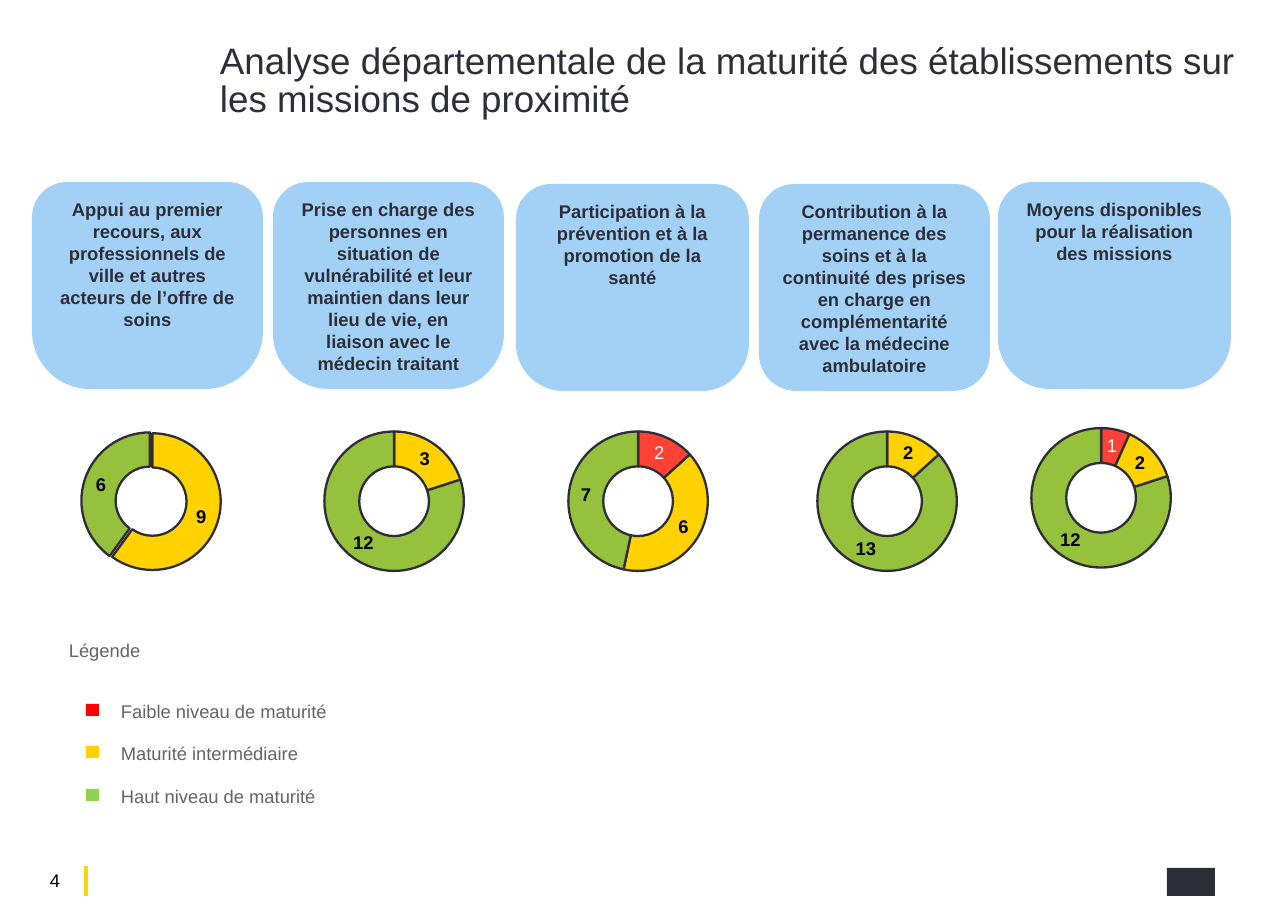
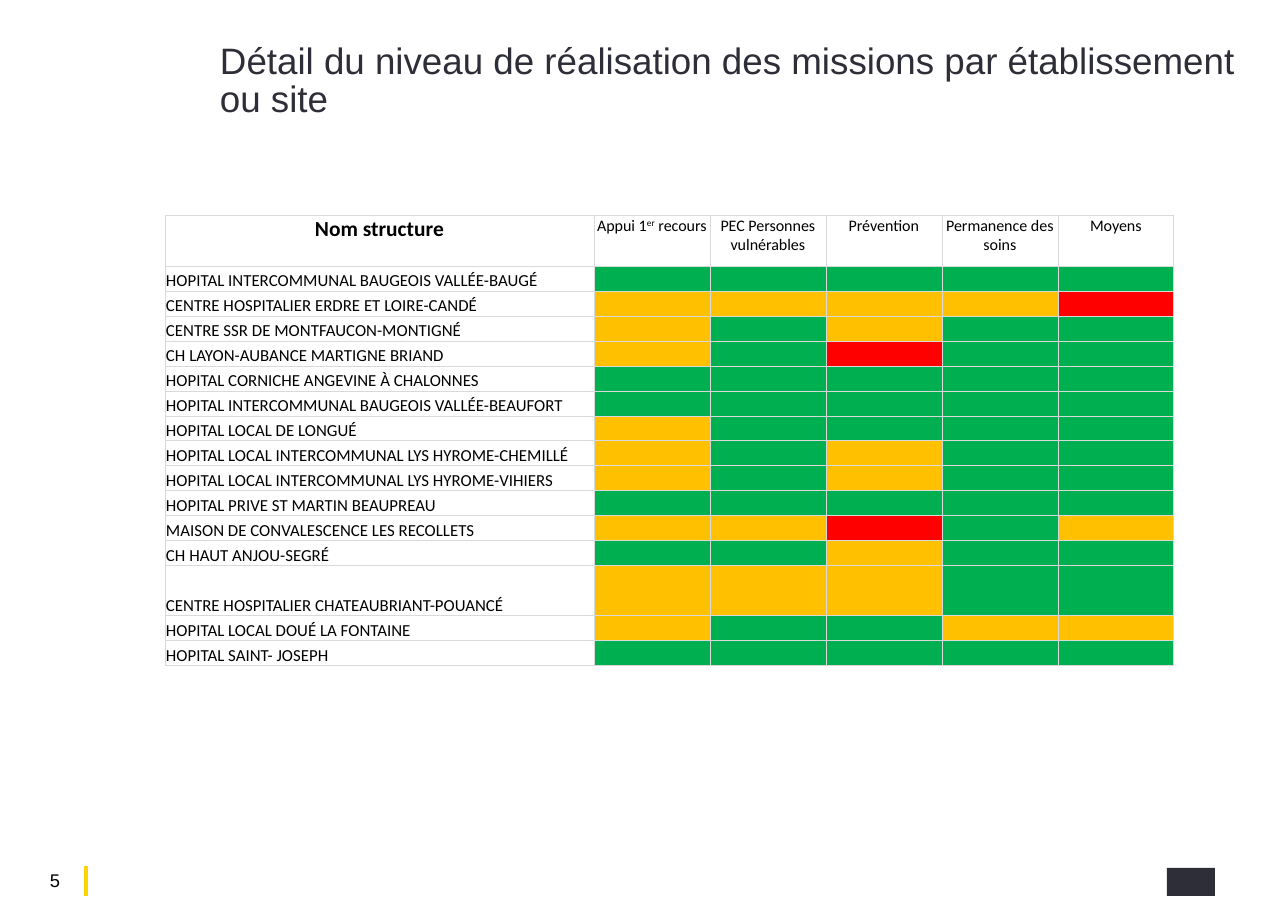
"""Build two slides on the maturity of local hospitals: donut charts and a status table."""
from lxml.etree import SubElement
from pptx import Presentation
from pptx.chart.data import CategoryChartData
from pptx.dml.color import RGBColor
from pptx.enum.chart import XL_CHART_TYPE as ChartType
from pptx.enum.shapes import MSO_CONNECTOR as Connector, MSO_SHAPE as Shape
from pptx.enum.text import MSO_ANCHOR as Anchor, PP_ALIGN as Align
from pptx.oxml import parse_xml
from pptx.oxml.ns import nsdecls, qn
from pptx.util import Emu, Pt

SCALE = 8300
WIDTH, HEIGHT = 1288, 911

BLACK = RGBColor(0x00, 0x00, 0x00)
WHITE = RGBColor(0xFF, 0xFF, 0xFF)
INK = RGBColor(0x2E, 0x2E, 0x38)
GREY = RGBColor(0x64, 0x64, 0x64)
YELLOW = RGBColor(0xFF, 0xD2, 0x00)
SKY = RGBColor(0xA2, 0xD1, 0xF5)
RED = RGBColor(0xFF, 0x00, 0x00)
LIME = RGBColor(0x92, 0xD0, 0x50)
SLICES = [RGBColor(0xFF, 0x41, 0x36), YELLOW, RGBColor(0x95, 0xC1, 0x3D)]
BORDER = "D9D9D9"
STATUS = {
    "V": RGBColor(0x00, 0xB0, 0x50),
    "O": RGBColor(0xFF, 0xC0, 0x00),
    "R": RED,
}

CHART_TITLE = "Analyse départementale de la maturité des établissements sur les missions de proximité"
TABLE_TITLE = "Détail du niveau de réalisation des missions par établissement ou site"

MISSIONS = [
    dict(text="Appui au premier recours, aux professionnels de ville et autres acteurs de l’offre de soins",
         card=(32, 182, 231, 207), bottom=0.28, chart=(20, 418, 279, 165),
         values=(None, 9, 6), explosion=4),
    dict(text="Prise en charge des personnes en situation de vulnérabilité et leur maintien dans "
              "leur lieu de vie, en liaison avec le médecin traitant",
         card=(273, 182, 231, 207), bottom=0.27, chart=(263, 418, 279, 165),
         values=(None, 3, 12), explosion=0),
    dict(text="Participation à la prévention et à la promotion de la santé",
         card=(516, 184, 233, 207), bottom=0.23, chart=(507, 418, 279, 165),
         values=(2, 6, 7), explosion=0),
    dict(text="Contribution à la permanence des soins et à la continuité des prises en charge en "
              "complémentarité avec la médecine ambulatoire",
         card=(759, 184, 231, 207), bottom=0.18, chart=(756, 418, 279, 165),
         values=(None, 2, 13), explosion=0),
    dict(text="Moyens disponibles pour la réalisation des missions",
         card=(998, 182, 233, 207), bottom=0.25, chart=(970, 407, 279, 180),
         values=(1, 2, 12), explosion=0),
]
PLOT = dict(x=0.22, y=0.06, w=0.5, h=0.89)

LEGEND = [
    ("Faible niveau de maturité", RED),
    ("Maturité intermédiaire", YELLOW),
    ("Haut niveau de maturité", LIME),
]

HEADERS = [
    [("Nom structure", False)],
    [("Appui 1", False), ("er", True), (" recours", False)],
    [("PEC Personnes vulnérables", False)],
    [("Prévention", False)],
    [("Permanence des soins", False)],
    [("Moyens", False)],
]
HOSPITALS = [
    ("HOPITAL INTERCOMMUNAL BAUGEOIS VALLÉE-BAUGÉ", "VVVVV"),
    ("CENTRE HOSPITALIER ERDRE ET LOIRE-CANDÉ", "OOOOR"),
    ("CENTRE SSR DE MONTFAUCON-MONTIGNÉ", "OVOVV"),
    ("CH LAYON-AUBANCE MARTIGNE BRIAND", "OVRVV"),
    ("HOPITAL CORNICHE ANGEVINE À CHALONNES", "VVVVV"),
    ("HOPITAL INTERCOMMUNAL BAUGEOIS VALLÉE-BEAUFORT", "VVVVV"),
    ("HOPITAL LOCAL DE LONGUÉ", "OVVVV"),
    ("HOPITAL LOCAL INTERCOMMUNAL LYS HYROME-CHEMILLÉ", "OVOVV"),
    ("HOPITAL LOCAL INTERCOMMUNAL LYS HYROME-VIHIERS", "OVOVV"),
    ("HOPITAL PRIVE ST MARTIN BEAUPREAU", "VVVVV"),
    ("MAISON DE CONVALESCENCE LES RECOLLETS", "OORVO"),
    ("CH HAUT ANJOU-SEGRÉ", "VVOVV"),
    ("CENTRE HOSPITALIER CHATEAUBRIANT-POUANCÉ", "OOOVV"),
    ("HOPITAL LOCAL DOUÉ LA FONTAINE", "OVVOO"),
    ("HOPITAL SAINT- JOSEPH", "VVVVV"),
]
COLUMN_WIDTHS = [429] + [116] * 5
HEADER_HEIGHT, ROW_HEIGHT, TALL_ROW = 51, 25, 13


def px(*lengths):
    return [Emu(length * SCALE) for length in lengths]


def style(font, size, color, bold=False, name="Arial"):
    font.name, font.size, font.bold = name, Pt(size), bold
    font.color.rgb = color


def add_text(page, text, area, size, color, align=Align.LEFT, inset=None, spacing=None, indent=0):
    frame = page.shapes.add_textbox(*px(*area)).text_frame
    frame.word_wrap = True
    if inset is not None:
        frame.margin_left = frame.margin_right = frame.margin_bottom = 0
        frame.margin_top = px(inset)[0]
    para = frame.paragraphs[0]
    para.text, para.alignment = text, align
    if spacing:
        para.line_spacing = spacing
    if indent:
        para._p.get_or_add_pPr().set("marL", str(indent * SCALE))
    style(para.font, size, color)


def add_block(page, preset, area, color):
    block = page.shapes.add_shape(preset, *px(*area))
    block.shadow.inherit = False
    block.fill.solid()
    block.fill.fore_color.rgb = color
    block.line.fill.background()
    return block


def add_page(deck, title, number):
    page = deck.slides.add_slide(deck.slide_layouts[6])
    add_text(page, str(number), (28, 869, 54, 23), 12, BLACK, Align.CENTER, inset=4, spacing=0.85)
    bar = page.shapes.add_connector(Connector.STRAIGHT, *px(86, 866, 86, 896))
    bar.line.color.rgb, bar.line.width = YELLOW, Pt(3)
    SubElement(bar._element.spPr, qn("a:effectLst"))
    add_block(page, Shape.RECTANGLE, (1167, 868, 48, 28), INK)
    add_text(page, title, (220, 45, 1018, 64), 24, INK, inset=0, spacing=0.85)
    return page


def add_card(page, mission):
    card = add_block(page, Shape.ROUND_2_SAME_RECTANGLE, mission["card"], SKY)
    card.adjustments[0], card.adjustments[1] = 0.17, mission["bottom"]
    frame = card.text_frame
    frame.word_wrap, frame.vertical_anchor = True, Anchor.TOP
    para = frame.paragraphs[0]
    para.text, para.alignment = mission["text"], Align.CENTER
    style(para.font, 12, INK, bold=True)


def add_donut(page, mission):
    data = CategoryChartData()
    data.categories = ["1", "2", "3"]
    data.add_series("Series 1", mission["values"])
    chart = page.shapes.add_chart(ChartType.DOUGHNUT, *px(*mission["chart"]), data).chart
    chart.has_legend = chart.has_title = False
    style(chart.font, 10, BLACK, bold=True)
    plot = chart.plots[0]
    plot.vary_by_categories = False
    plot._element.find(qn("c:holeSize")).set("val", "75")

    series = plot.series[0]
    series.format.line.color.rgb, series.format.line.width = INK, Pt(1.5)
    if mission["explosion"]:
        series._element.find(qn("c:spPr")).addnext(
            parse_xml(f'<c:explosion {nsdecls("c")} val="{mission["explosion"]}"/>'))
    labels = series.data_labels
    labels.show_value = True
    style(labels.font, 12, BLACK, bold=True)
    for index, color in enumerate(SLICES):
        point = series.points[index]
        point.format.fill.solid()
        point.format.fill.fore_color.rgb = color
        point.format.line.color.rgb, point.format.line.width = INK, Pt(1.5)
    if mission["values"][0]:
        style(series.points[0].data_label.font, 12, WHITE)

    area = chart._chartSpace.chart.plotArea
    for old in area.findall(qn("c:layout")):
        area.remove(old)
    places = "".join(f'<c:{key}Mode val="edge"/>' for key in "xy")
    places += "".join(f'<c:{key} val="{value}"/>' for key, value in PLOT.items())
    area.insert(0, parse_xml(
        f'<c:layout {nsdecls("c")}><c:manualLayout><c:layoutTarget val="inner"/>'
        f'{places}</c:manualLayout></c:layout>'))


def add_legend(page):
    add_text(page, "Légende", (48, 634, 331, 33), 12, GREY, indent=10)
    for index, (text, color) in enumerate(LEGEND):
        top = 704 + index * 85 // 2
        add_block(page, Shape.RECTANGLE, (86, top, 13, 12), color)
        add_text(page, text, (100, top - 9, 300, 33), 12, GREY, indent=10)


def format_cell(cell, color):
    cell.margin_left = cell.margin_right = cell.margin_top = px(1)[0]
    cell.margin_bottom = 0
    properties = cell._tc.get_or_add_tcPr()
    for side in "LRTB":
        properties.append(parse_xml(
            f'<a:ln{side} {nsdecls("a")} w="6350"><a:solidFill>'
            f'<a:srgbClr val="{BORDER}"/></a:solidFill></a:ln{side}>'))
    cell.fill.solid()
    cell.fill.fore_color.rgb = color


def add_status_table(page):
    heights = [HEADER_HEIGHT] + [ROW_HEIGHT] * len(HOSPITALS)
    heights[TALL_ROW] *= 2
    area = (165, 215, sum(COLUMN_WIDTHS), sum(heights))
    table = page.shapes.add_table(len(heights), len(COLUMN_WIDTHS), *px(*area)).table
    table.first_row = table.horz_banding = False
    for column, width in zip(table.columns, px(*COLUMN_WIDTHS)):
        column.width = width
    for row, height in zip(table.rows, px(*heights)):
        row.height = height

    for column, spans in enumerate(HEADERS):
        cell = table.cell(0, column)
        format_cell(cell, WHITE)
        para = cell.text_frame.paragraphs[0]
        para.alignment = Align.CENTER
        style(para.font, 10.5 if column else 14, BLACK, bold=not column, name="Calibri")
        for text, raised in spans:
            span = para.add_run()
            span.text = text
            if raised:
                span._r.get_or_add_rPr().set("baseline", "30000")

    for row, (name, levels) in enumerate(HOSPITALS, 1):
        cell = table.cell(row, 0)
        format_cell(cell, WHITE)
        cell.vertical_anchor = Anchor.BOTTOM
        para = cell.text_frame.paragraphs[0]
        para.text = name
        style(para.font, 11, BLACK, name="Calibri")
        for column, level in enumerate(levels, 1):
            cell = table.cell(row, column)
            format_cell(cell, STATUS[level])
            SubElement(cell.text_frame.paragraphs[0]._p, qn("a:endParaRPr")).set("sz", "1000")


def main():
    deck = Presentation()
    deck.slide_width, deck.slide_height = px(WIDTH, HEIGHT)
    page = add_page(deck, CHART_TITLE, 4)
    for mission in MISSIONS:
        add_donut(page, mission)
        add_card(page, mission)
    add_legend(page)
    add_status_table(add_page(deck, TABLE_TITLE, 5))
    deck.save("out.pptx")


if __name__ == "__main__":
    main()
